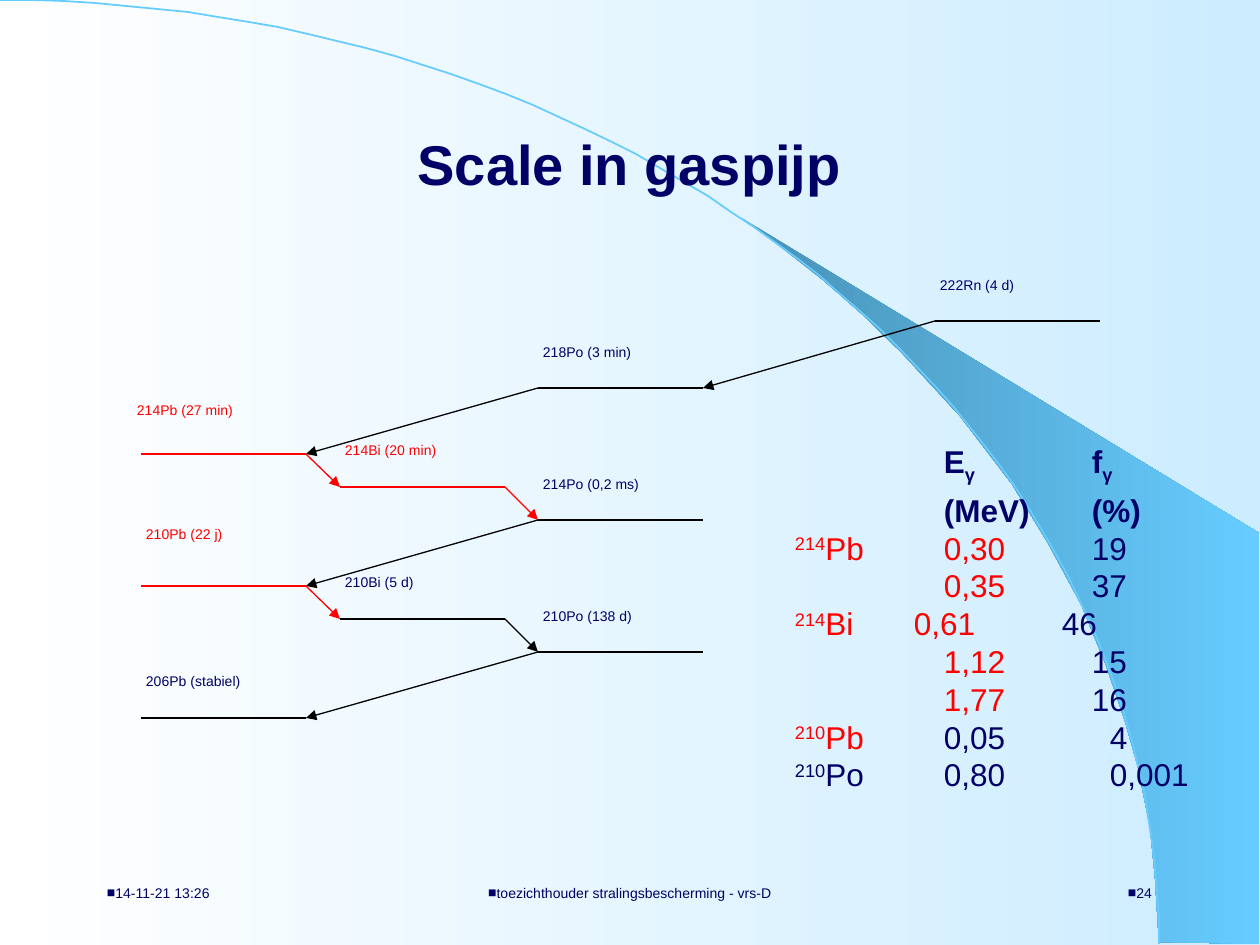
from lxml import etree
from pptx import Presentation
from pptx import util as u
from pptx.dml.color import RGBColor
from pptx.enum import shapes, text
from pptx.oxml.ns import qn

NAVY = RGBColor(0x00, 0x00, 0x66)
RED = RGBColor(0xFF, 0x00, 0x00)
BLACK = RGBColor(0x00, 0x00, 0x00)
WHITE = RGBColor(0xFF, 0xFF, 0xFF)
PALE = RGBColor(0xCC, 0xEC, 0xFF)
SKY = RGBColor(0x66, 0xCC, 0xFF)
STEEL = RGBColor(0x49, 0x92, 0xB6)
LEFT, CENTER, RIGHT = text.PP_ALIGN.LEFT, text.PP_ALIGN.CENTER, text.PP_ALIGN.RIGHT


def px(length):
    return u.Emu(round(length * 914400 / 126))


class Page:
    font = "Arial"

    def __init__(self, deck):
        self.slide = deck.slides.add_slide(deck.slide_layouts[6])
        self.shapes = self.slide.shapes

    def gradient(self, fill, start, end):
        fill.gradient()
        fill.gradient_angle = 0
        for stop, color, position in zip(fill.gradient_stops, (start, end), (0, 1)):
            stop.color.rgb = color
            stop.position = position

    def outline(self, points, close):
        builder = self.shapes.build_freeform(*points[0], scale=px(1))
        builder.add_line_segments(points[1:], close=close)
        shape = builder.convert_to_shape()
        shape.shadow.inherit = False
        return shape

    def line(self, start, end, color, width, arrow=False):
        link = self.shapes.add_connector(
            shapes.MSO_CONNECTOR.STRAIGHT, *map(px, start + end))
        link.line.color.rgb = color
        link.line.width = u.Pt(width)
        if arrow:
            etree.SubElement(link.line._get_or_add_ln(), qn("a:tailEnd"), type="triangle")
        etree.SubElement(link._element.spPr, qn("a:effectLst"))

    def box(self, left, top, width, height, inset=(13, 6), anchor=text.MSO_ANCHOR.TOP):
        frame = self.shapes.add_textbox(*map(px, (left, top, width, height))).text_frame
        frame.word_wrap = True
        frame.vertical_anchor = anchor
        frame.margin_left = frame.margin_right = px(inset[0])
        frame.margin_top = frame.margin_bottom = px(inset[1])
        return frame

    def span(self, para, words, size, color=NAVY, bold=False, baseline=0):
        span = para.add_run()
        span.text = words
        span.font.name = self.font
        span.font.size = u.Pt(size)
        span.font.bold = bold
        span.font.color.rgb = color
        if baseline:
            span._r.get_or_add_rPr().set("baseline", str(baseline * 1000))

    def title(self, words):
        para = self.box(94, 84, 1071, 158, anchor=text.MSO_ANCHOR.MIDDLE).paragraphs[0]
        para.alignment = CENTER
        self.span(para, words, 32, bold=True)

    def footer(self, left, width, words, align):
        para = self.box(left, 861, width, 63, anchor=text.MSO_ANCHOR.MIDDLE).paragraphs[0]
        para.alignment = align
        props = para._p.get_or_add_pPr()
        props.set("marL", "0")
        props.set("indent", "0")
        etree.SubElement(props, qn("a:buFont"), typeface=self.font)
        etree.SubElement(props, qn("a:buChar"), char="■")
        self.span(para, words, 8)

    def label(self, left, top, words, color):
        para = self.box(left, top, 212, 57, inset=(5, 5)).paragraphs[0]
        para.space_before = u.Pt(2)
        self.span(para, words, 8, color)

    def row(self, para, stops, spans):
        para.line_spacing = u.Pt(21.6)
        tabs = etree.SubElement(para._p.get_or_add_pPr(), qn("a:tabLst"))
        for stop in stops:
            etree.SubElement(tabs, qn("a:tab"), pos=str(px(stop)), algn="l")
        for words, color, bold, baseline in spans:
            self.span(para, words, 18, color, bold, baseline)


def curve_points(start, first, second, end, steps=60):
    points = []
    for step in range(steps + 1):
        t = step / steps
        weights = ((1 - t) ** 3, 3 * t * (1 - t) ** 2, 3 * t * t * (1 - t), t ** 3)
        points.append(tuple(
            sum(w * p for w, p in zip(weights, axis))
            for axis in zip(start, first, second, end)))
    return points


WEDGE = [(1159, 942), (1259, 944), (1259, 533), (742, 218), (786, 251), (823, 280),
         (863, 315), (902, 353), (960, 416), (1012, 484), (1048, 543), (1081, 604),
         (1106, 665), (1125, 721), (1138, 767), (1150, 827), (1155, 877)]

LEVEL_WIDTH = 165
LEVELS = {
    "222Rn (4 d)": (935, 321, BLACK, NAVY, 0, 49),
    "218Po (3 min)": (538, 388, BLACK, NAVY, 0, 50),
    "214Pb (27 min)": (141, 454, RED, RED, -9, 58),
    "214Bi (20 min)": (340, 487, RED, RED, 0, 50),
    "214Po (0,2 ms)": (538, 520, BLACK, NAVY, 0, 50),
    "210Pb (22 j)": (141, 586, RED, RED, 0, 66),
    "210Bi (5 d)": (340, 619, BLACK, NAVY, 0, 50),
    "210Po (138 d)": (538, 652, BLACK, NAVY, 0, 50),
    "206Pb (stabiel)": (141, 718, BLACK, NAVY, 0, 50),
}

GAMMA_ROWS = [
    ("214", "Pb", RED, "0,30", RED, "19", (149, 297)),
    ("", "", RED, "0,35", RED, "37", (149, 297)),
    ("214", "Bi", RED, "0,61", RED, "46", (119, 267)),
    ("", "", RED, "1,12", RED, "15", (149, 297)),
    ("", "", RED, "1,77", RED, "16", (149, 297)),
    ("210", "Pb", RED, "0,05", NAVY, "4", (149, 315)),
    ("210", "Po", NAVY, "0,80", NAVY, "0,001", (149, 315)),
]


def draw_backdrop(page):
    page.gradient(page.slide.background.fill, WHITE, PALE)
    wedge = page.outline(WEDGE, True)
    page.gradient(wedge.fill, STEEL, SKY)
    wedge.line.fill.background()
    arc = page.outline(curve_points((0, 0), (640, 0), (1159, 422), (1159, 944)), False)
    arc.fill.background()
    arc.line.color.rgb = SKY
    arc.line.width = u.Pt(1)


def draw_decay_chain(page):
    for name, (left, y, color, ink, shift, rise) in LEVELS.items():
        page.line((left + LEVEL_WIDTH, y), (left, y), color, 1)
        page.label(left + shift, y - rise, name, ink)
    chain = list(LEVELS.values())
    for parent, child in zip(chain, chain[1:]):
        leftward = child[0] < parent[0]
        start = parent[0] if leftward else parent[0] + LEVEL_WIDTH
        end = child[0] + LEVEL_WIDTH if leftward else child[0]
        color = BLACK if leftward else parent[2]
        page.line((start, parent[1]), (end, child[1]), color, 0.75, arrow=True)


def draw_gamma_list(page):
    frame = page.box(782, 441, 440, 369)
    heading = frame.paragraphs[0]
    heading.space_after = u.Pt(3.4)
    page.row(heading, (149, 297), [
        ("\tE", NAVY, True, 0), ("γ", NAVY, True, -25),
        ("\tf", NAVY, True, 0), ("γ", NAVY, True, -25)])
    page.row(frame.add_paragraph(), (149, 297), [("\t(MeV)\t(%)", NAVY, True, 0)])
    for mass, element, ink, energy, energy_ink, yield_, stops in GAMMA_ROWS:
        spans = [(mass, ink, False, 30), (element, ink, False, 0)] if mass else []
        spans += [("\t" + energy, energy_ink, False, 0), ("\t" + yield_, NAVY, False, 0)]
        page.row(frame.add_paragraph(), stops, spans)


def main():
    deck = Presentation()
    deck.slide_width, deck.slide_height = px(1260), px(945)
    page = Page(deck)
    draw_backdrop(page)
    page.footer(94, 262, "14-11-21 13:26", LEFT)
    page.footer(363, 534, "toezichthouder stralingsbescherming - vrs-D", CENTER)
    page.footer(903, 262, "24", RIGHT)
    page.title("Scale in gaspijp")
    draw_gamma_list(page)
    draw_decay_chain(page)
    deck.save("out.pptx")


if __name__ == "__main__":
    main()
